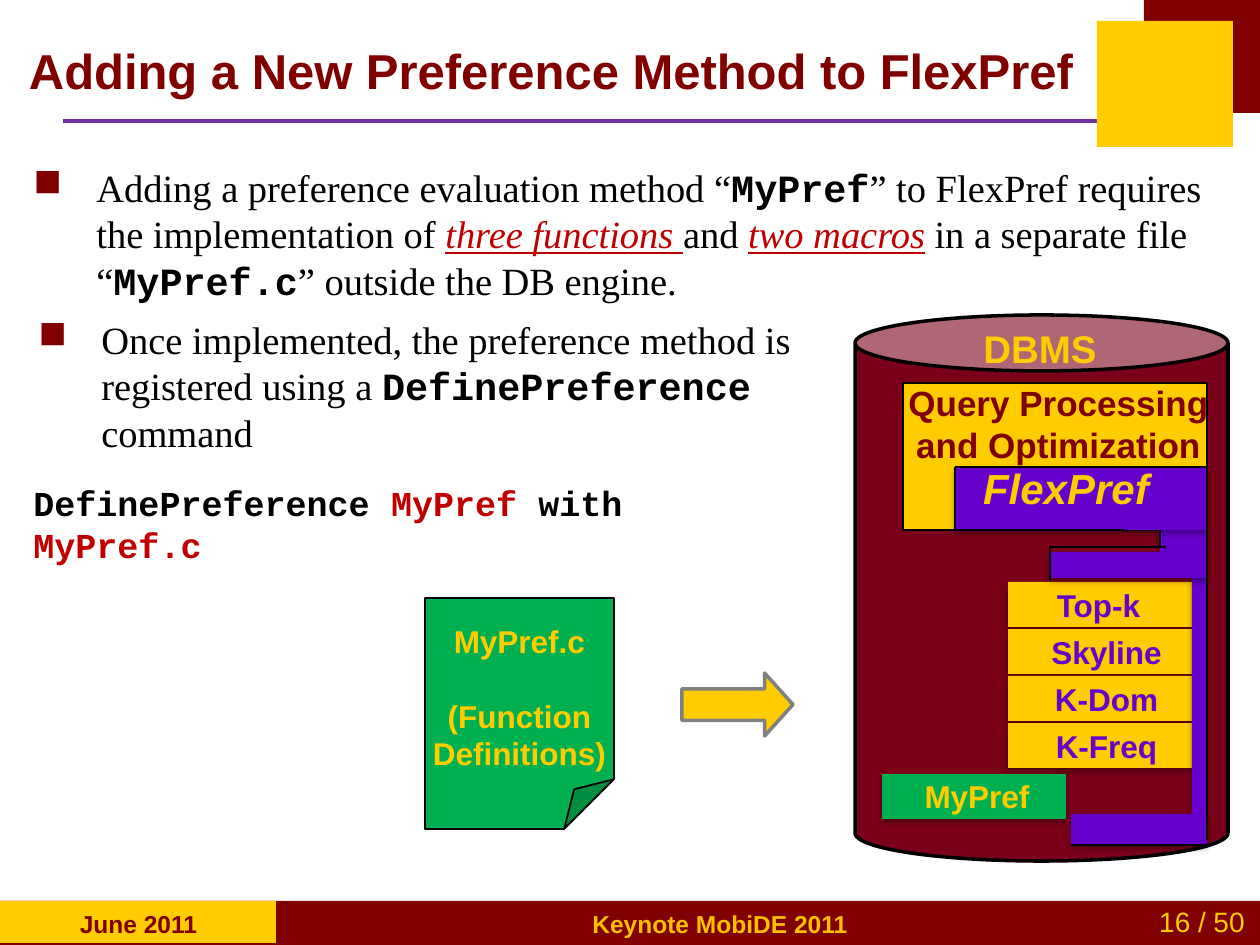
from lxml import etree
from pptx import Presentation
from pptx.dml.color import RGBColor
from pptx.enum.shapes import MSO_CONNECTOR, MSO_SHAPE
from pptx.enum.text import MSO_ANCHOR, PP_ALIGN
from pptx.oxml.ns import qn
from pptx.util import Emu, Pt

SCALE = 914400 / 126
STRAIGHT = MSO_CONNECTOR.STRAIGHT
RECTANGLE, CAN = MSO_SHAPE.RECTANGLE, MSO_SHAPE.CAN
NOTE, ARROW = MSO_SHAPE.FOLDED_CORNER, MSO_SHAPE.DOWN_ARROW
LEFT, CENTER = PP_ALIGN.LEFT, PP_ALIGN.CENTER
TOP, MIDDLE = MSO_ANCHOR.TOP, MSO_ANCHOR.MIDDLE
SANS, SERIF, MONO = "Arial", "Times New Roman", "Courier New"
COLORS = {
    "maroon": "800000", "wine": "7A0019", "gold": "FFCC00", "amber": "FFC000",
    "purple": "6600CC", "violet": "7030A0", "green": "00B050", "red": "C00000",
    "gray": "808080", "black": "000000",
}
PLAIN = {"font": SERIF, "size": 22}
CODE = {"font": MONO, "size": 22, "bold": True}
TERM = {"font": SERIF, "size": 22, "color": "red", "italic": True, "underline": True}
COMMAND = {"font": MONO, "size": 20, "bold": True}
ARGUMENT = {**COMMAND, "color": "red"}


def px(length):
    """Turn pixels into EMU."""
    return Emu(round(length * SCALE))


def rgb(name):
    """Look up a named colour."""
    return RGBColor.from_string(COLORS[name])


def heading(color, size, italic=False):
    """Return the style of bold sans text."""
    return {"color": color, "size": size, "bold": True, "italic": italic}


def add_shadow(shape):
    """Cast a soft shadow straight down."""
    effects = shape._element.spPr.find(qn("a:effectLst"))
    outer = etree.SubElement(effects, qn("a:outerShdw"), blurRad="44450",
                             dist="27940", dir="5400000", rotWithShape="0")
    color = etree.SubElement(outer, qn("a:srgbClr"), val=COLORS["black"])
    etree.SubElement(color, qn("a:alpha"), val="32000")


def add_shape(page, kind, frame, fill, line=None, shadow=False):
    """Add a filled preset shape, with an optional (colour, width) outline."""
    shape = page.shapes.add_shape(kind, *map(px, frame))
    shape.shadow.inherit = False
    shape.fill.solid()
    shape.fill.fore_color.rgb = rgb(fill)
    if line:
        shape.line.color.rgb = rgb(line[0])
        shape.line.width = Pt(line[1])
    else:
        shape.line.fill.background()
    if shadow:
        add_shadow(shape)
    return shape


def add_line(page, start, end, color="black", width=1.25):
    """Add a straight line without a shadow."""
    line = page.shapes.add_connector(STRAIGHT, *map(px, (*start, *end)))
    line.line.color.rgb = rgb(color)
    line.line.width = Pt(width)
    etree.SubElement(line._element.spPr, qn("a:effectLst"))


def add_span(para, text, font=SANS, size=18, color="black", bold=False,
             italic=False, underline=False):
    """Append one styled run to a paragraph."""
    span = para.add_run()
    span.text = text
    span.font.name = font
    span.font.size = Pt(size)
    span.font.color.rgb = rgb(color)
    span.font.bold = bold
    span.font.italic = italic
    span.font.underline = underline


def add_text(page, frame, spans, align=CENTER, anchor=TOP):
    """Add a wrapping text box holding one paragraph and return the paragraph."""
    box = page.shapes.add_textbox(*map(px, frame))
    box.text_frame.word_wrap = True
    box.text_frame.vertical_anchor = anchor
    para = box.text_frame.paragraphs[0]
    para.alignment = align
    for text, style in spans:
        add_span(para, text, **style)
    return para


def add_bullet(page, frame, spans):
    """Add a paragraph with a square bullet and a hanging indent."""
    para = add_text(page, frame, spans, LEFT)
    properties = para._p.get_or_add_pPr()
    properties.set("marL", str(px(63)))
    properties.set("indent", str(-px(63)))
    color = etree.SubElement(properties, qn("a:buClr"))
    etree.SubElement(color, qn("a:srgbClr"), val=COLORS["maroon"])
    etree.SubElement(properties, qn("a:buChar"), char="■")


def add_frame(page):
    """Draw the title, its rule, the corner squares and the footer."""
    add_line(page, (63, 121), (1097, 121), "violet", 2.25)
    for frame, fill in (
        ((0, 901, 1260, 44), "maroon"), ((0, 901, 276, 42), "gold"),
        ((1144, 0, 116, 113), "maroon"), ((1097, 21, 136, 126), "gold"),
    ):
        add_shape(page, RECTANGLE, frame, fill)
    add_text(page, (15, 903, 247, 42), [("June 2011", heading("maroon", 14))])
    add_text(page, (1138, 898, 128, 47), [("16 / 50", {"size": 16, "color": "gold"})])
    add_text(page, (547, 903, 346, 42), [("Keynote MobiDE 2011", heading("amber", 14))])
    add_text(page, (0, 13, 1102, 113),
             [("Adding a New Preference Method to FlexPref", heading("maroon", 28))],
             anchor=MIDDLE)


def add_source_file(page):
    """Draw the source file note and the arrow to the database."""
    note = add_shape(page, NOTE, (425, 598, 189, 231), "green", ("black", 1))
    guides = note._element.spPr.find(qn("a:prstGeom")).get_or_add_avLst()
    etree.SubElement(guides, qn("a:gd"), name="adj", fmla="val 26300")
    frame = note.text_frame
    frame.word_wrap = True
    frame.vertical_anchor = TOP
    frame.margin_left = frame.margin_right = px(6)
    frame.margin_top = px(24)
    definitions = frame.add_paragraph()
    definitions.space_before = Pt(21)
    for para, text in ((frame.paragraphs[0], "MyPref.c"),
                       (definitions, "(Function Definitions)")):
        para.alignment = CENTER
        add_span(para, text, **heading("gold", 18))
    arrow = add_shape(page, ARROW, (706, 649, 63, 111), "gold", ("gray", 2))
    arrow.adjustments[1] = 0.45
    arrow.rotation = 270


def add_methods(page):
    """Stack the built-in preference methods."""
    methods = (("Top-k", 1008), ("Skyline", 1016), ("K-Dom", 1016), ("K-Freq", 1016))
    for row, (name, left) in enumerate(methods):
        top = 582 + 47 * row
        add_shape(page, RECTANGLE, (1008, top, 184, 45), "gold", shadow=True)
        add_text(page, (left, top - 2, 181, 50), [(name, heading("purple", 18))])


def add_database(page):
    """Draw the database with its query engine and preference methods."""
    database = add_shape(page, CAN, (855, 315, 373, 546), "wine", ("black", 2))
    database.adjustments[0] = 0.15
    add_shape(page, RECTANGLE, (903, 383, 304, 147), "gold")
    add_methods(page)
    add_text(page, (877, 375, 363, 97),
             [("Query Processing and Optimization", heading("maroon", 20))])
    for start, end in (
        ((1207, 383), (1207, 530)), ((903, 383), (1207, 383)),
        ((1207, 530), (1113, 530)), ((903, 383), (903, 530)),
    ):
        add_line(page, start, end)
    for frame in ((1160, 530, 47, 26), (1192, 577, 15, 262),
                  (1050, 552, 157, 26), (1071, 814, 136, 31)):
        add_shape(page, RECTANGLE, frame, "purple", shadow=True)
    add_shape(page, RECTANGLE, (882, 774, 184, 45), "green", shadow=True)
    add_text(page, (898, 771, 158, 50), [("MyPref", heading("gold", 18))])
    for start, end in (
        ((1207, 840), (1207, 530)), ((1207, 845), (1071, 845)),
        ((1050, 547), (1050, 580)), ((1166, 547), (1050, 547)),
        ((1160, 530), (1160, 547)),
    ):
        add_line(page, start, end)
    add_shape(page, RECTANGLE, (955, 467, 252, 63), "purple", shadow=True)
    for start, end in (
        ((1207, 462), (1207, 530)), ((955, 467), (1207, 467)),
        ((955, 467), (955, 530)), ((955, 530), (998, 530)),
        ((903, 530), (1124, 530)),
    ):
        add_line(page, start, end)
    add_text(page, (945, 456, 242, 63), [("FlexPref", heading("gold", 24, True))])
    add_text(page, (940, 319, 200, 59), [("DBMS", heading("gold", 22))])


def add_explanation(page):
    """Write the two bullets and the registration command."""
    add_text(page, (21, 475, 800, 55), [
        ("DefinePreference ", COMMAND), ("MyPref", ARGUMENT),
        (" with ", COMMAND), ("MyPref.c", ARGUMENT)], LEFT)
    add_bullet(page, (21, 158, 1218, 158), [
        ("Adding a preference evaluation method “", PLAIN), ("MyPref", CODE),
        ("” to FlexPref requires the implementation of ", PLAIN),
        ("three functions ", TERM), ("and ", PLAIN), ("two macros", TERM),
        (" in a separate file “", PLAIN), ("MyPref.c", CODE),
        ("” outside the DB engine.", PLAIN)])
    add_bullet(page, (26, 310, 793, 174), [
        ("Once implemented, the preference method is registered using a ", PLAIN),
        ("DefinePreference", CODE), (" command", PLAIN)])


def main():
    """Build the slide and save it."""
    deck = Presentation()
    deck.slide_width, deck.slide_height = px(1260), px(945)
    page = deck.slides.add_slide(deck.slide_layouts[6])
    add_frame(page)
    add_source_file(page)
    add_database(page)
    add_explanation(page)
    deck.save("out.pptx")


if __name__ == "__main__":
    main()
